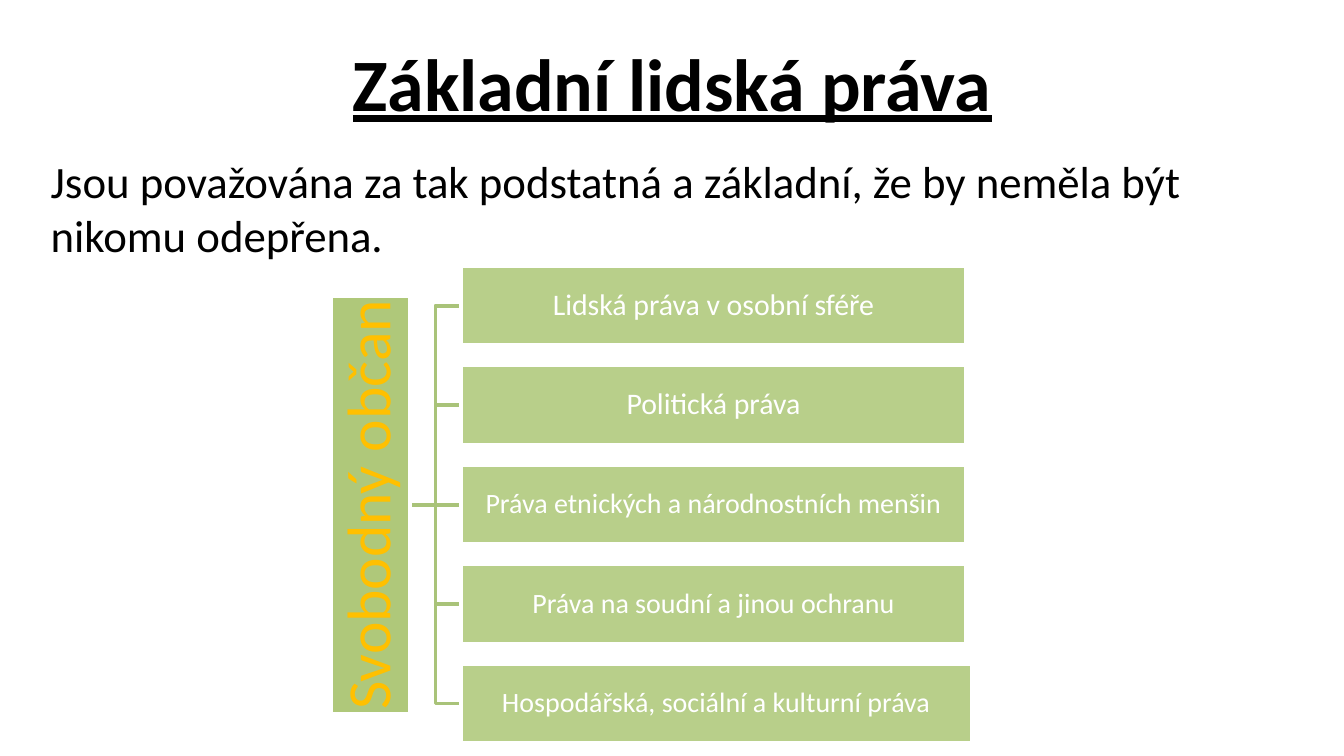
import pptx
import pptx.util
import pptx.dml.color
import pptx.enum.shapes
import pptx.enum.text
import pptx.oxml.ns
from lxml import etree

Cm, Pt = pptx.util.Cm, pptx.util.Pt
RGBColor = pptx.dml.color.RGBColor
PP_ALIGN = pptx.enum.text.PP_ALIGN
MIDDLE = pptx.enum.text.MSO_ANCHOR.MIDDLE
qn = pptx.oxml.ns.qn

BLACK = RGBColor(0x00, 0x00, 0x00)
WHITE = RGBColor(0xFF, 0xFF, 0xFF)
GREEN = RGBColor(0x9B, 0xBB, 0x59)
BRANCH = RGBColor(0xA9, 0xC3, 0x79)
GOLD = RGBColor(0xFF, 0xC0, 0x00)

TITLE = "Základní lidská práva"
INTRO = "Jsou považována za tak podstatná a základní, že by neměla být nikomu odepřena."
ROOT = "Svobodný občan"
# text, font size, box width in cm
RIGHTS = [
    ("Lidská práva v osobní sféře", 16, 9.55),
    ("Politická práva", 16, 9.55),
    ("Práva etnických a národnostních menšin", 15, 9.55),
    ("Práva na soudní a jinou ochranu", 15, 9.55),
    ("Hospodářská, sociální a kulturní práva", 15, 9.65),
]

BOX_H, PITCH = 1.5, 1.88
BOX_X, FIRST_Y = 8.71, 5.03
ROOT_W, ROOT_CX = 7.9, 7.0
ROOT_EDGE = ROOT_CX + BOX_H / 2
MID_X = (ROOT_EDGE + BOX_X) / 2
centers = [FIRST_Y + BOX_H / 2 + i * PITCH for i in range(len(RIGHTS))]
ROOT_CY = centers[len(centers) // 2]


def write(sp, text, size, color, align=PP_ALIGN.CENTER, anchor=MIDDLE):
    tf = sp.text_frame
    tf.word_wrap = True
    tf.vertical_anchor = anchor
    p = tf.paragraphs[0]
    p.text = text
    p.alignment = align
    p.font.name, p.font.size, p.font.color.rgb = "Calibri", Pt(size), color
    return p


def add_box(x, y, w, opacity, text, size, color, inset):
    """Add a translucent green box with a white outline and centred text."""
    sp = s.shapes.add_shape(pptx.enum.shapes.MSO_SHAPE.RECTANGLE,
                            Cm(x), Cm(y), Cm(w), Cm(BOX_H))
    sp.shadow.inherit = False
    sp.fill.solid()
    sp.fill.fore_color.rgb = GREEN
    rgb = sp.fill._xPr.find(".//" + qn("a:srgbClr"))
    etree.SubElement(rgb, qn("a:alpha"), val=str(opacity * 1000))
    sp.line.color.rgb, sp.line.width = WHITE, Pt(2)
    tf = sp.text_frame
    tf.margin_left = tf.margin_right = tf.margin_top = tf.margin_bottom = Cm(inset)
    write(sp, text, size, color).line_spacing = 0.9
    return sp


def add_branch(y):
    """Join the root box to the right whose centre is at y."""
    if y == ROOT_CY:
        sp = s.shapes.add_connector(pptx.enum.shapes.MSO_CONNECTOR.STRAIGHT,
                                    Cm(ROOT_EDGE), Cm(y), Cm(BOX_X), Cm(y))
        etree.SubElement(sp._element.spPr, qn("a:effectLst"))
    else:
        fb = s.shapes.build_freeform(Cm(ROOT_EDGE), Cm(ROOT_CY))
        fb.add_line_segments([(Cm(MID_X), Cm(ROOT_CY)), (Cm(MID_X), Cm(y)),
                              (Cm(BOX_X), Cm(y))], close=False)
        sp = fb.convert_to_shape()
        sp.shadow.inherit = False
        sp.fill.background()
    sp.line.color.rgb, sp.line.width = BRANCH, Pt(2)


prs = pptx.Presentation()
prs.slide_width, prs.slide_height = Cm(25.4), Cm(14.29)
s = prs.slides.add_slide(prs.slide_layouts[6])

title = s.shapes.add_textbox(Cm(1.7), Cm(0.58), Cm(22.02), Cm(1.93))
p = write(title, TITLE, 39.6, BLACK)
p.font.bold = p.font.underline = True

intro = s.shapes.add_textbox(Cm(0.71), Cm(2.79), Cm(23.19), Cm(2.31))
write(intro, INTRO, 24, BLACK, PP_ALIGN.LEFT, pptx.enum.text.MSO_ANCHOR.TOP)

for y in reversed(centers):
    add_branch(y)

root = add_box(ROOT_CX - ROOT_W / 2, ROOT_CY - BOX_H / 2, ROOT_W, 80,
               ROOT, 33, GOLD, 0.05)
root.rotation = 270

for y, (text, size, width) in zip(centers, RIGHTS):
    add_box(BOX_X, y - BOX_H / 2, width, 70, text, size, WHITE, 0.03)

prs.save("out.pptx")
